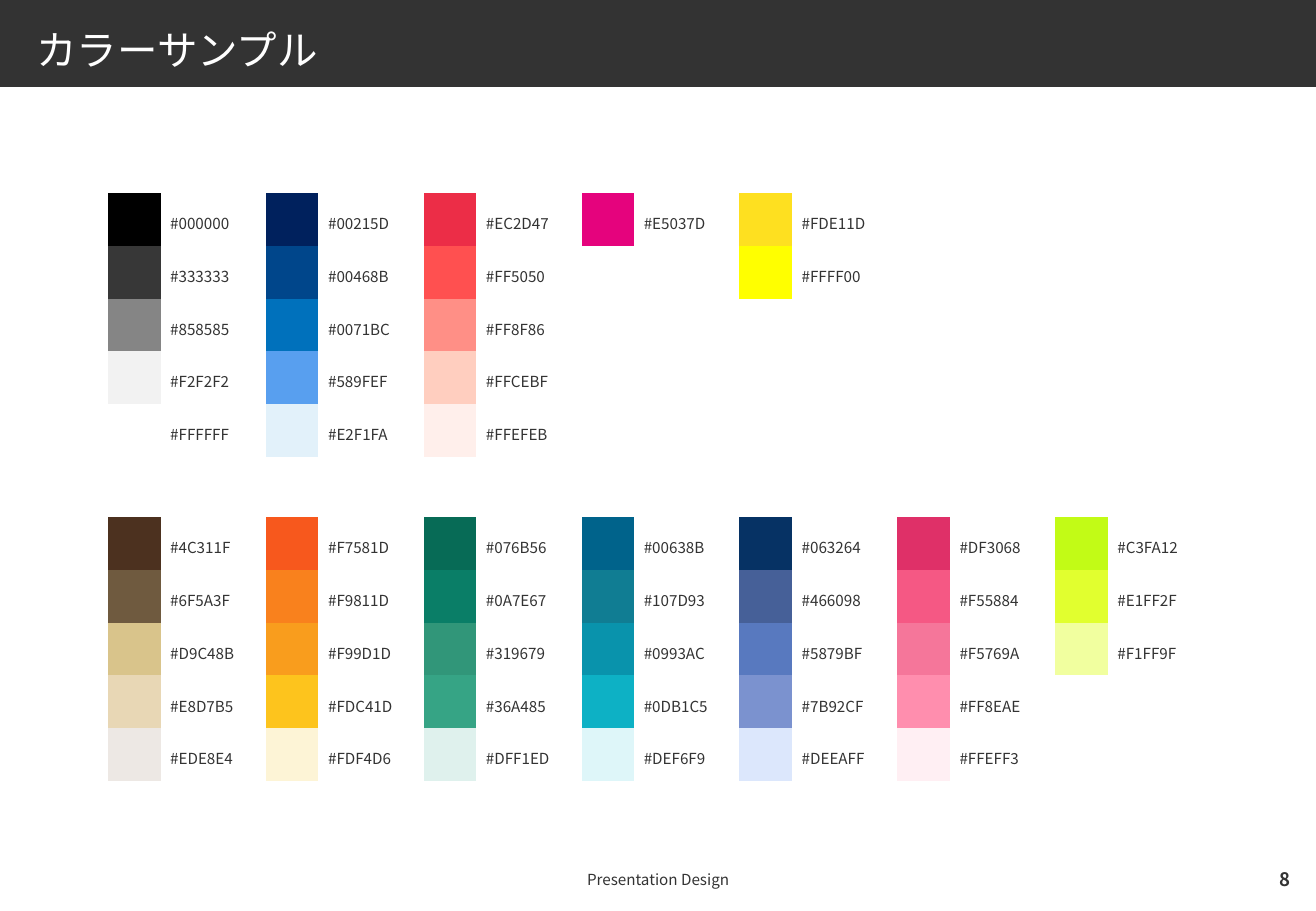
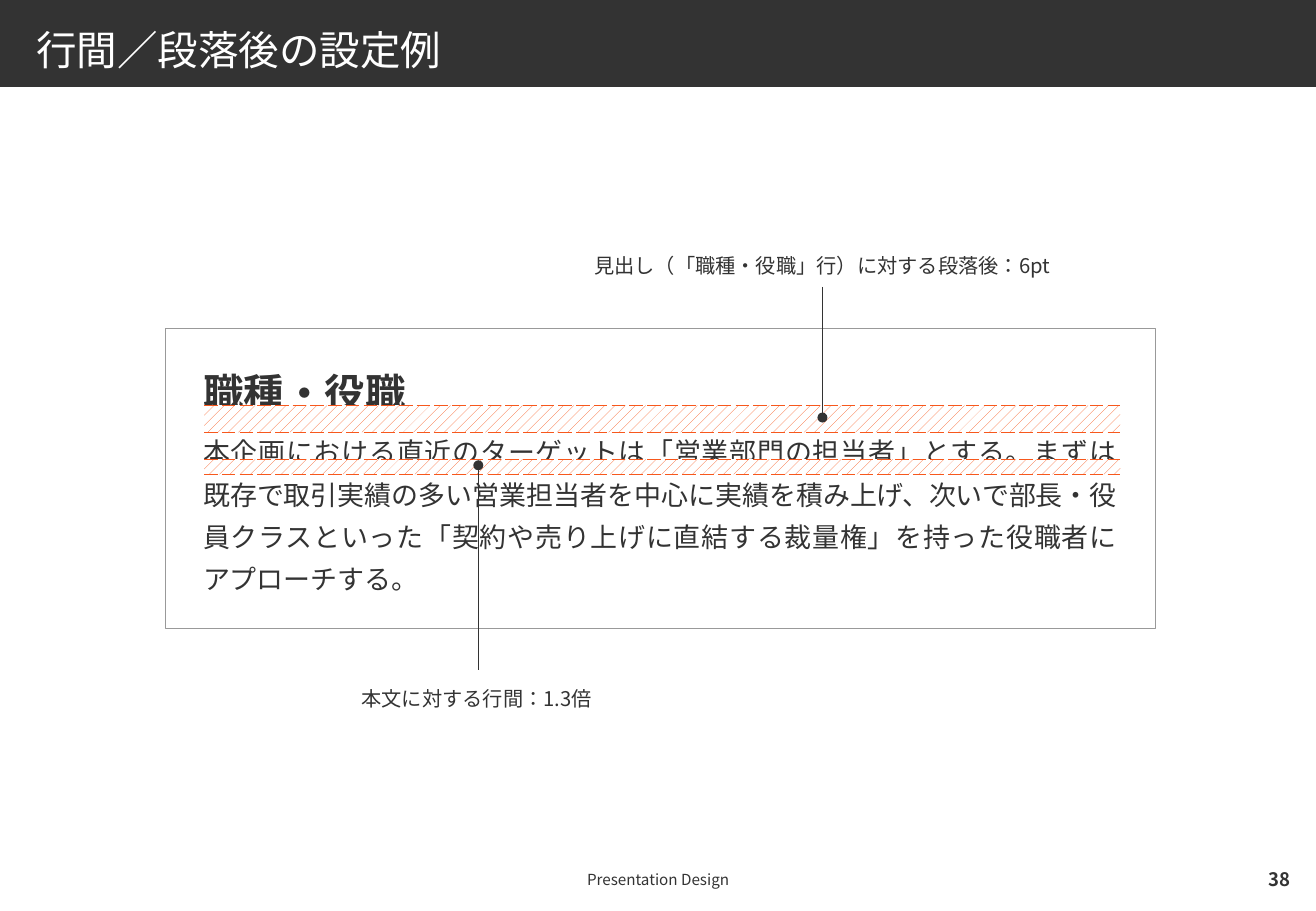
from lxml import etree
from pptx import Presentation
from pptx.dml.color import RGBColor
from pptx.enum import dml, lang, shapes, text
from pptx.oxml import ns
from pptx.util import Pt

# Content
COLORS = {"ink": "333333", "white": "FFFFFF", "frame": "999999", "accent": "F7581D"}
FONT = "Noto Sans CJK JP"
NO_STYLE = "{2D5ABB26-0587-4C30-8999-92F81FD0307C}"
FOOTER = "Presentation Design"

# Each palette: top, then one list of colour codes per column
PALETTES = [
    (306.5, [
        ["4C311F", "6F5A3F", "D9C48B", "E8D7B5", "EDE8E4"],
        ["F7581D", "F9811D", "F99D1D", "FDC41D", "FDF4D6"],
        ["076B56", "0A7E67", "319679", "36A485", "DFF1ED"],
        ["00638B", "107D93", "0993AC", "0DB1C5", "DEF6F9"],
        ["063264", "466098", "5879BF", "7B92CF", "DEEAFF"],
        ["DF3068", "F55884", "F5769A", "FF8EAE", "FFEFF3"],
        ["C3FA12", "E1FF2F", "F1FF9F"],
    ]),
    (114.4, [
        ["000000", "333333", "858585", "F2F2F2", "FFFFFF"],
        ["00215D", "00468B", "0071BC", "589FEF", "E2F1FA"],
        ["EC2D47", "FF5050", "FF8F86", "FFCEBF", "FFEFEB"],
        ["E5037D"],
        ["FDE11D", "FFFF00"],
    ]),
]
# Swatches whose fill differs slightly from the code beside them
SWATCH_FILL = {"333333": "373737", "FDE11D": "FEE020", "C3FA12": "C2FB16", "DEEAFF": "DCE7FC"}
PALETTE_LEFT, SWATCH_W, CODE_W, ROW_H = 64, 31.2, 62.4, 31.3

HEADING = "職種・役職"
# Runs of the body with their letter spacing in hundredths of a point
BODY = [
    ("本企画における直近のターゲットは「営業部門の担当者」とする。まずは", 35),
    ("既存で取引実績の多い営業担当者を中心に実績を積み上げ、次いで部長・役員クラスといった"
     "「契約や売り上げに直結する裁量権」を持った役職者にアプローチする。", 0),
]
# Label, its box, top and height of the hatched band, x of the leader, its start and dot
CALLOUTS = [
    ("見出し（「職種・役職」行）に対する段落後：6pt", (338.7, 147.2, 297.4, 16.6),
     (240.3, 16), (487.5, 170, 247.5)),
    ("本文に対する行間：1.3倍", (175.7, 404, 213.8, 16.6),
     (272.2, 9), (283.5, 397, 275.8)),
]
BAND_LEFT, BAND_W = 121, 543


# Helpers
def rgb(value):
    return RGBColor.from_string(COLORS.get(value, value))


def pts(*values):
    return [Pt(v) for v in values]


def add_run(p, content, size, color="ink", bold=False, tracking=0):
    r = p.add_run()
    r.text = content
    f = r.font
    f.name, f.size, f.bold = FONT, Pt(size), bold
    f.language_id = lang.MSO_LANGUAGE_ID.JAPANESE
    f.color.rgb = rgb(color)
    if tracking:
        r._r.rPr.set("spc", str(tracking))
    latin = r._r.rPr.find(ns.qn("a:latin"))
    latin.addnext(latin.makeelement(ns.qn("a:ea"), {"typeface": FONT}))


def set_frame(tf, margins=(0, 0, 0, 0), anchor=text.MSO_ANCHOR.MIDDLE):
    tf.word_wrap = True
    tf.vertical_anchor = anchor
    tf.margin_left, tf.margin_top, tf.margin_right, tf.margin_bottom = pts(*margins)


def set_paragraph(p, align, spacing, after=0):
    p.alignment, p.line_spacing, p.space_after = align, spacing, Pt(after)


def add_text(s, box, content, size, align=text.PP_ALIGN.LEFT, color="ink", bold=False,
             spacing=1.0):
    tf = s.shapes.add_textbox(*pts(*box)).text_frame
    set_frame(tf)
    p = tf.paragraphs[0]
    set_paragraph(p, align, spacing)
    add_run(p, content, size, color, bold)


def add_box(s, box, fill=None, line=None):
    sp = s.shapes.add_shape(shapes.MSO_SHAPE.RECTANGLE, *pts(*box))
    sp.shadow.inherit = False
    if fill:
        sp.fill.solid()
        sp.fill.fore_color.rgb = rgb(fill)
    else:
        sp.fill.background()
    if line:
        sp.line.color.rgb = rgb(line)
        sp.line.width = Pt(0.75)
    else:
        sp.line.fill.background()
    return sp


def add_label(s, box, content):
    tf = add_box(s, box).text_frame
    set_frame(tf, anchor=text.MSO_ANCHOR.TOP)
    p = tf.paragraphs[0]
    set_paragraph(p, text.PP_ALIGN.CENTER, 1.2)
    add_run(p, content, 12)


def add_plain_table(s, rows, cols, box):
    table = s.shapes.add_table(rows, cols, *pts(*box)).table
    table.first_row = table.horz_banding = False
    table._tbl.tblPr.find(ns.qn("a:tableStyleId")).text = NO_STYLE
    for cell in table.iter_cells():
        cell.fill.background()
        cell.margin_left = cell.margin_top = cell.margin_right = cell.margin_bottom = 0
        cell.text_frame.paragraphs[0]._p.get_or_add_endParaRPr().set("sz", "100")
    return table


def add_palette(s, top, columns):
    rows = max(len(c) for c in columns)
    width = len(columns) * (SWATCH_W + CODE_W)
    table = add_plain_table(s, rows, 2 * len(columns), (PALETTE_LEFT, top, width, rows * ROW_H))
    for i, codes in enumerate(columns):
        table.columns[2 * i].width = Pt(SWATCH_W)
        table.columns[2 * i + 1].width = Pt(CODE_W)
        for j, code in enumerate(codes):
            swatch, label = table.cell(j, 2 * i), table.cell(j, 2 * i + 1)
            swatch.fill.solid()
            swatch.fill.fore_color.rgb = rgb(SWATCH_FILL.get(code, code))
            label.vertical_anchor = text.MSO_ANCHOR.MIDDLE
            label.margin_left = label.margin_right = Pt(5.7)
            label.margin_top, label.margin_bottom = pts(8.64, 9.6)
            p = label.text_frame.paragraphs[0]
            set_paragraph(p, text.PP_ALIGN.JUSTIFY, 1.2, 3)
            add_run(p, "#" + code, 9)


def add_band(s, top, height):
    cell = add_plain_table(s, 1, 1, (BAND_LEFT, top, BAND_W, height)).cell(0, 0)
    cell.fill.patterned()
    cell.fill.pattern = dml.MSO_PATTERN.PERCENT_20
    cell.fill.fore_color.rgb = rgb("accent")
    cell.fill.back_color.rgb = rgb("white")
    tc_pr = cell._tc.get_or_add_tcPr()
    for i, side in enumerate(("a:lnT", "a:lnB")):
        ln = tc_pr.makeelement(ns.qn(side), {"w": str(Pt(0.5))})
        fill = etree.SubElement(ln, ns.qn("a:solidFill"))
        etree.SubElement(fill, ns.qn("a:srgbClr"), val=COLORS["accent"])
        etree.SubElement(ln, ns.qn("a:prstDash"), val="dash")
        tc_pr.insert(i, ln)


def add_leader(s, x, start, dot):
    line = s.shapes.add_connector(shapes.MSO_CONNECTOR.STRAIGHT, *pts(x, start, x, dot))
    line.line.color.rgb = rgb("ink")
    line.line.width = Pt(0.75)
    etree.SubElement(line.line._get_or_add_ln(), ns.qn("a:tailEnd"), type="oval")
    etree.SubElement(line._element.spPr, ns.qn("a:effectLst"))


def new_slide(prs, title, number):
    s = prs.slides.add_slide(prs.slide_layouts[6])
    add_box(s, (0, 0, 780, 51.6), fill="ink")
    add_text(s, (64, 511, 652, 21), FOOTER, 9, text.PP_ALIGN.CENTER)
    add_text(s, (727.5, 511, 37.5, 20.5), number, 11, text.PP_ALIGN.RIGHT, bold=True)
    add_text(s, (21.6, 12.2, 737, 31), title, 24, color="white", spacing=1.1)
    return s


def main():
    prs = Presentation()
    prs.slide_width, prs.slide_height = pts(780, 540)

    # Colour samples
    s = new_slide(prs, "カラーサンプル", "8")
    for top, columns in PALETTES:
        add_palette(s, top, columns)

    # Spacing example
    s = new_slide(prs, "行間／段落後の設定例", "38")
    tf = add_box(s, (98, 194.8, 587, 177.7), line="frame").text_frame
    set_frame(tf, (22.4, 20.2, 22.4, 20.2), text.MSO_ANCHOR.TOP)
    p = tf.paragraphs[0]
    set_paragraph(p, text.PP_ALIGN.LEFT, 1.1, 6)
    add_run(p, HEADING, 24, bold=True)
    p = tf.add_paragraph()
    set_paragraph(p, text.PP_ALIGN.JUSTIFY, 1.3)
    for content, tracking in BODY:
        add_run(p, content, 16, tracking=tracking)

    for label, box, band, leader in CALLOUTS:
        add_label(s, box, label)
        add_band(s, *band)
        add_leader(s, *leader)

    prs.save("out.pptx")


if __name__ == "__main__":
    main()
